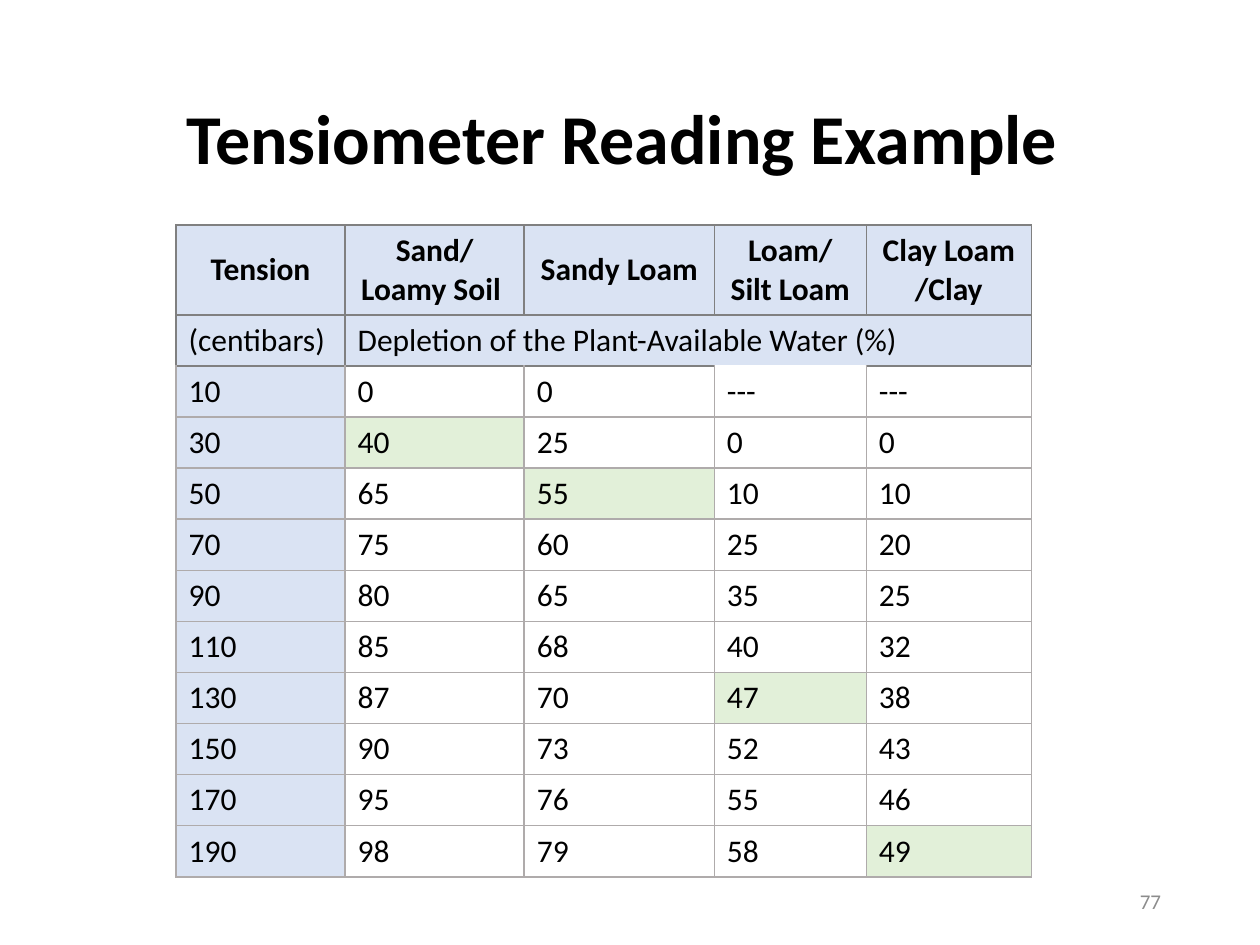
from dataclasses import dataclass

from lxml.etree import SubElement
from pptx import Presentation
from pptx.dml.color import RGBColor as Rgb
from pptx.enum.text import MSO_ANCHOR as Anchor, MSO_AUTO_SIZE as AutoSize, PP_ALIGN as Align
from pptx.oxml.ns import qn
from pptx.util import Pt


@dataclass(frozen=True)
class Theme:
    font: str = "Calibri"
    text: str = "000000"
    muted: str = "8C8C8C"
    header: str = "DAE3F3"
    plain: str = "FFFFFF"
    highlight: str = "E2F0D9"
    header_border: str = "808080"
    body_border: str = "AFABAB"
    title_size: int = 40
    table_size: int = 18
    number_size: int = 12


@dataclass(frozen=True)
class Box:
    left: float
    top: float
    width: float
    height: float

    def lengths(self) -> tuple:
        return Pt(self.left), Pt(self.top), Pt(self.width), Pt(self.height)


@dataclass(frozen=True)
class CellStyle:
    fill: str
    border: str
    top_border: str
    bold: bool = False


THEME = Theme()
TITLE_BOX = Box(49.7, 28.8, 620.6, 104.4)
NUMBER_BOX = Box(508.5, 500.5, 162, 28.8)
TABLE_LEFT, TABLE_TOP = 100.6, 128.7
COLUMN_WIDTHS = (96.6, 102.4, 108.6, 86.9, 94.3)
HEADER_HEIGHT, ROW_HEIGHT = 51.2, 29.2

SOILS = ("Tension", "Sand/\nLoamy Soil ", "Sandy Loam", "Loam/\nSilt Loam", "Clay Loam\n/Clay")
UNITS = ("(centibars)", "Depletion of the Plant-Available Water (%)", "", "", "")
READINGS = (
    (10, 0, 0, "---", "---"),
    (30, 40, 25, 0, 0),
    (50, 65, 55, 10, 10),
    (70, 75, 60, 25, 20),
    (90, 80, 65, 35, 25),
    (110, 85, 68, 40, 32),
    (130, 87, 70, 47, 38),
    (150, 90, 73, 52, 43),
    (170, 95, 76, 55, 46),
    (190, 98, 79, 58, 49),
)
ROWS = (SOILS, UNITS) + READINGS
HEADER_ROWS = 2
# Tension row and soil column of each highlighted reading
HIGHLIGHTS = {(30, 1), (50, 2), (130, 3), (190, 4)}


def style_text(frame, size: int, color: str, align: Align, bold: bool = False) -> None:
    for paragraph in frame.paragraphs:
        paragraph.alignment = align
        for run in paragraph.runs:
            run.font.name = THEME.font
            run.font.size = Pt(size)
            run.font.bold = bold
            run.font.color.rgb = Rgb.from_string(color)


def set_borders(cell, style: CellStyle) -> None:
    properties = cell._tc.get_or_add_tcPr()
    for position, side in enumerate("LRTB"):
        color = style.top_border if side == "T" else style.border
        line = SubElement(properties, qn(f"a:ln{side}"), w=str(Pt(1)))
        solid = SubElement(line, qn("a:solidFill"))
        SubElement(solid, qn("a:srgbClr"), val=color)
        properties.insert(position, line)  # borders come before the fill


def cell_style(row: int, column: int) -> CellStyle:
    if row < HEADER_ROWS:
        return CellStyle(THEME.header, THEME.header_border, THEME.header_border, bold=row == 0)
    if column == 0:
        fill = THEME.header
    else:
        fill = THEME.highlight if (ROWS[row][0], column) in HIGHLIGHTS else THEME.plain
    top_border = THEME.body_border
    if row == HEADER_ROWS:
        top_border = THEME.plain if column == 3 else THEME.header_border
    return CellStyle(fill, THEME.body_border, top_border)


def draw_cell(cell, text: str, style: CellStyle) -> None:
    cell.text_frame.text = text
    cell.vertical_anchor = Anchor.MIDDLE if style.bold else Anchor.TOP
    align = Align.CENTER if style.bold else Align.LEFT
    style_text(cell.text_frame, THEME.table_size, THEME.text, align, style.bold)
    cell.fill.solid()
    cell.fill.fore_color.rgb = Rgb.from_string(style.fill)
    set_borders(cell, style)


def draw_title(slide) -> None:
    title = slide.shapes.title
    title.left, title.top, title.width, title.height = TITLE_BOX.lengths()
    frame = title.text_frame
    frame.text = "Tensiometer Reading Example "
    frame.auto_size = AutoSize.NONE
    frame.vertical_anchor = Anchor.MIDDLE
    frame.paragraphs[0].line_spacing = 0.9
    style_text(frame, THEME.title_size, THEME.text, Align.CENTER, bold=True)


def draw_readings(slide) -> None:
    heights = [HEADER_HEIGHT] + [ROW_HEIGHT] * (len(ROWS) - 1)
    table_box = Box(TABLE_LEFT, TABLE_TOP, sum(COLUMN_WIDTHS), sum(heights))
    table = slide.shapes.add_table(len(ROWS), len(SOILS), *table_box.lengths()).table
    table.first_row = table.horz_banding = False
    for column, width in zip(table.columns, COLUMN_WIDTHS):
        column.width = Pt(width)
    for row, height in zip(table.rows, heights):
        row.height = Pt(height)
    for row, values in enumerate(ROWS):
        for column, value in enumerate(values):
            draw_cell(table.cell(row, column), str(value), cell_style(row, column))
    # The depletion heading spans all soils
    table.cell(1, 1).merge(table.cell(1, len(SOILS) - 1))


def draw_page_number(slide) -> None:
    frame = slide.shapes.add_textbox(*NUMBER_BOX.lengths()).text_frame
    frame.text = "77"
    frame.word_wrap = True
    frame.vertical_anchor = Anchor.MIDDLE
    style_text(frame, THEME.number_size, THEME.muted, Align.RIGHT)


def main() -> None:
    deck = Presentation()
    deck.slide_width, deck.slide_height = Pt(720), Pt(540)
    slide = deck.slides.add_slide(deck.slide_layouts.get_by_name("Title Only"))
    draw_title(slide)
    draw_readings(slide)
    draw_page_number(slide)
    deck.save("out.pptx")


if __name__ == "__main__":
    main()
